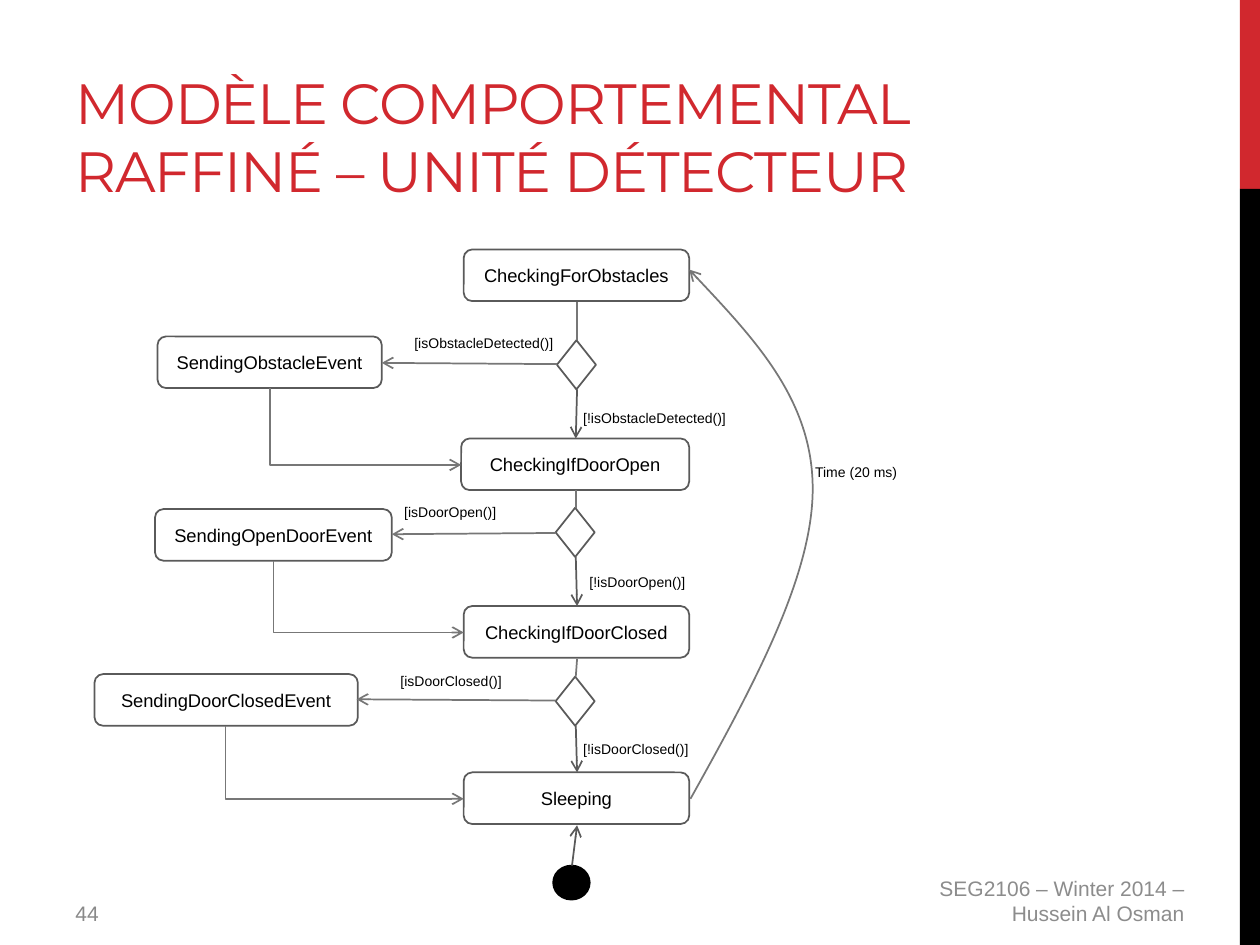
import pptx
import pptx.util
import pptx.dml.color
import pptx.enum.shapes
import pptx.enum.text
import pptx.oxml.ns
import lxml.etree

Inches = pptx.util.Inches
Pt = pptx.util.Pt
Kind = pptx.enum.shapes.MSO_SHAPE
Link = pptx.enum.shapes.MSO_CONNECTOR
Align = pptx.enum.text.PP_ALIGN
Anchor = pptx.enum.text.MSO_ANCHOR
qn = pptx.oxml.ns.qn

RED, BLACK, DARK, GREY = "D1282E", "000000", "5A5A5A", "777777"


def tint(fill, code):
    fill.solid()
    fill.fore_color.rgb = pptx.dml.color.RGBColor.from_string(code)


def write(frame, words, size, code, align=Align.LEFT, anchor=Anchor.TOP, face="Arial"):
    frame.word_wrap = True
    frame.vertical_anchor = anchor
    para = frame.paragraphs[0]
    para.alignment = align
    run = para.add_run()
    run.text = words
    run.font.size = Pt(size)
    run.font.name = face
    tint(run.font.fill, code)
    return run


deck = pptx.Presentation()
deck.slide_width = Inches(10)
deck.slide_height = Inches(7.5)
slide = deck.slides.add_slide(deck.slide_layouts[6])
shapes = slide.shapes

# Side band
for top, high, code in [(0, 1.5, RED), (1.5, 6, BLACK)]:
    band = shapes.add_shape(Kind.RECTANGLE, Inches(9.84), Inches(top), Inches(0.16), Inches(high))
    band.shadow.inherit = False
    tint(band.fill, code)
    band.line.fill.background()

# Title
title = shapes.add_textbox(Inches(0.5), Inches(0.17), Inches(7.58), Inches(1.5))
run = write(title.text_frame, "MODÈLE COMPORTEMENTAL RAFFINÉ – UNITÉ DÉTECTEUR",
            32.4, RED, anchor=Anchor.BOTTOM, face="Montserrat")
run.font._element.set("spc", "-60")

# Footer and page number
foot = shapes.add_textbox(Inches(7.17), Inches(6.95), Inches(2.33), Inches(0.4))
write(foot.text_frame, "SEG2106 – Winter 2014 – Hussein Al Osman", 12, "8C8C8C",
      Align.RIGHT, Anchor.MIDDLE)
page = shapes.add_textbox(Inches(0.5), Inches(7.1), Inches(3.75), Inches(0.31))
write(page.text_frame, "44", 12, "898989")

# States
states = [
    ("CheckingForObstacles", 3.68, 1.98, 1.79),
    ("CheckingIfDoorOpen", 3.66, 3.48, 1.81),
    ("CheckingIfDoorClosed", 3.68, 4.81, 1.79),
    ("Sleeping", 3.68, 6.13, 1.79),
    ("SendingObstacleEvent", 1.25, 2.67, 1.78),
    ("SendingOpenDoorEvent", 1.23, 4.04, 1.88),
    ("SendingDoorClosedEvent", 0.75, 5.35, 2.09),
]
for name, left, top, wide in states:
    box = shapes.add_shape(Kind.ROUNDED_RECTANGLE, Inches(left), Inches(top), Inches(wide), Inches(0.41))
    box.shadow.inherit = False
    box.fill.background()
    tint(box.line.fill, DARK)
    box.line.width = Pt(1)
    write(box.text_frame, name, 10.5, BLACK, Align.CENTER, Anchor.MIDDLE)

# Choices and start point
marks = [(Kind.DIAMOND, 4.42, 2.7, 0.31, 0.39), (Kind.DIAMOND, 4.41, 4.03, 0.31, 0.39),
         (Kind.DIAMOND, 4.41, 5.37, 0.31, 0.39), (Kind.OVAL, 4.39, 6.87, 0.29, 0.27)]
for kind, *place in marks:
    mark = shapes.add_shape(kind, *map(Inches, place))
    mark.shadow.inherit = False
    mark.line.width = Pt(1)
    if kind == Kind.OVAL:
        tint(mark.fill, BLACK)
        tint(mark.line.fill, BLACK)
    else:
        mark.fill.background()
        tint(mark.line.fill, DARK)

# Guards and timer label
labels = [
    ("[isObstacleDetected()]", 3.19, 2.61, 1.39),
    ("[!isObstacleDetected()]", 4.53, 3.2, 1.39),
    ("[isDoorOpen()]", 3.11, 3.95, 1.06),
    ("[!isDoorOpen()]", 4.58, 4.5, 1.39),
    ("[isDoorClosed()]", 3.08, 5.29, 1.06),
    ("[!isDoorClosed()]", 4.53, 5.83, 1.39),
    ("Time (20 ms)", 6.37, 3.63, 0.92),
]
for words, left, top, wide in labels:
    label = shapes.add_textbox(Inches(left), Inches(top), Inches(wide), Inches(0.24))
    write(label.text_frame, words, 8, BLACK)

# Straight links: from, to, colour, arrow
arrows = []
links = [
    (4.58, 2.4, 4.58, 2.7, GREY, False),
    (4.57, 3.89, 4.57, 4.03, GREY, False),
    (4.58, 5.23, 4.57, 5.37, GREY, False),
    (4.58, 3.09, 4.57, 3.48, DARK, True),
    (4.57, 4.42, 4.58, 4.81, DARK, True),
    (4.57, 5.76, 4.58, 6.13, DARK, True),
    (4.54, 6.87, 4.58, 6.55, DARK, True),
    (4.42, 2.89, 3.03, 2.88, GREY, True),
    (4.41, 4.23, 3.11, 4.24, GREY, True),
    (4.41, 5.56, 2.83, 5.55, GREY, True),
]
for *ends, code, tip in links:
    link = shapes.add_connector(Link.STRAIGHT, *map(Inches, ends))
    tint(link.line.fill, code)
    link.line.width = Pt(1)
    lxml.etree.SubElement(link._element.spPr, qn("a:effectLst"))
    if tip:
        arrows.append(link)

# Bent links go down, then right: a one-corner elbow, turned and flipped
for x, y, right, low in [(2.14, 3.08, 3.66, 3.69), (2.17, 4.45, 3.68, 5.02), (1.79, 5.76, 3.68, 6.34)]:
    wide, high = low - y, right - x
    left, top = (x + right - wide) / 2, (y + low - high) / 2
    bend = shapes.add_connector(Link.ELBOW, Inches(left), Inches(top),
                                Inches(left + wide), Inches(top + high))
    props = bend._element.spPr
    props.find(qn("a:prstGeom")).set("prst", "bentConnector2")
    frame = props.find(qn("a:xfrm"))
    frame.set("rot", "16200000")
    frame.set("flipH", "1")
    tint(bend.line.fill, GREY)
    bend.line.width = Pt(1)
    lxml.etree.SubElement(props, qn("a:effectLst"))
    arrows.append(bend)

# Timer curve: each three segments become one Bezier
knots = [(5.97, 5.46), (6.45, 4.58), (6.45, 3.88), (6.45, 3.18), (5.96, 2.66), (5.47, 2.14)]
pen = shapes.build_freeform(Inches(5.48), Inches(6.34))
pen.add_line_segments([(Inches(x), Inches(y)) for x, y in knots], close=False)
curve = pen.convert_to_shape()
curve.shadow.inherit = False
curve.fill.background()
tint(curve.line.fill, GREY)
curve.line.width = Pt(1)
arrows.append(curve)
trace = next(curve._element.iter(qn("a:path")))
steps = trace.findall(qn("a:lnTo"))
for i in range(0, len(steps), 3):
    arc = lxml.etree.SubElement(trace, qn("a:cubicBezTo"))
    for step in steps[i:i + 3]:
        arc.append(step[0])
        trace.remove(step)

# Arrowheads
for item in arrows:
    tail = lxml.etree.SubElement(item.line._get_or_add_ln(), qn("a:tailEnd"))
    tail.set("type", "arrow")

deck.save("out.pptx")
